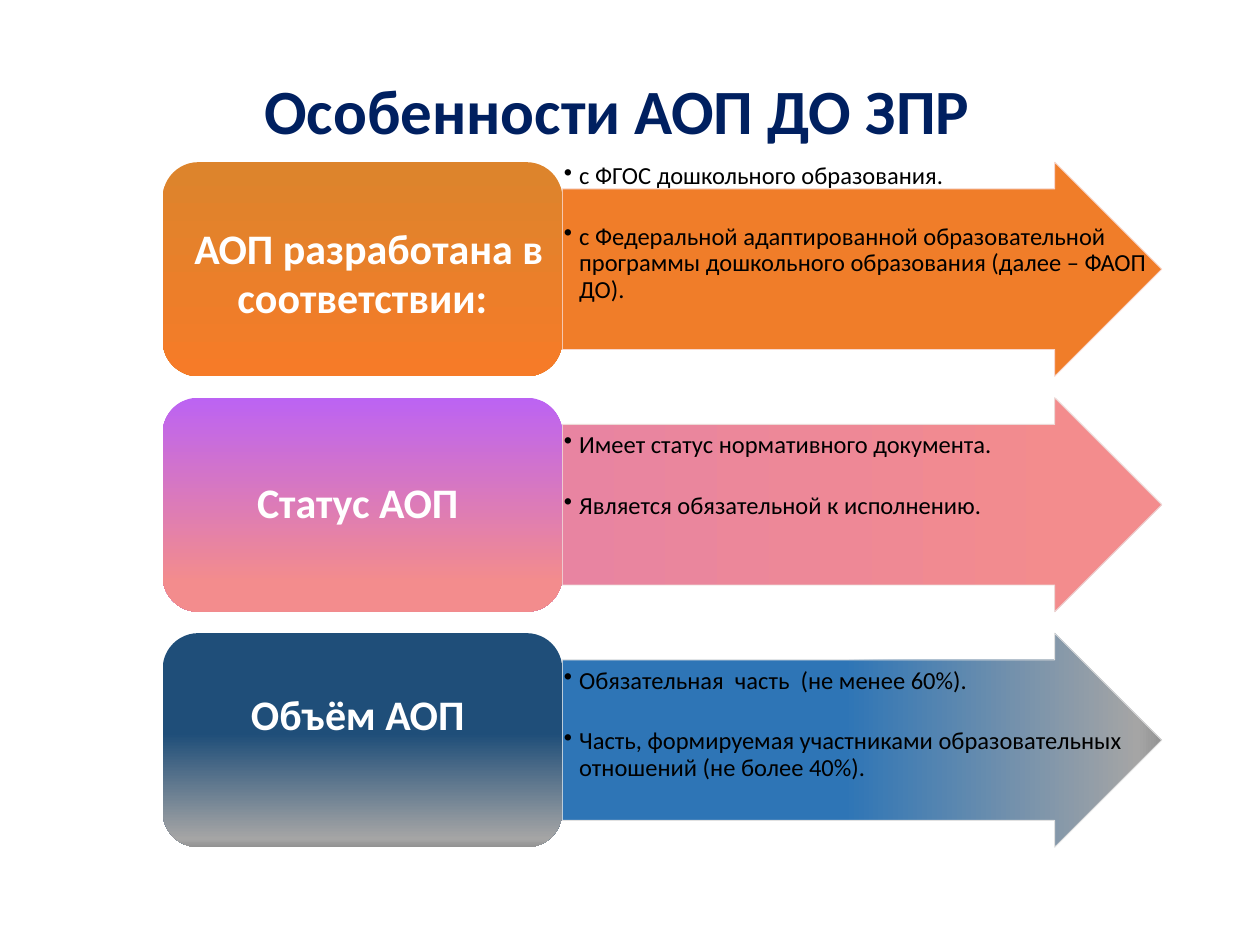
from copy import deepcopy

from pptx import Presentation
from pptx.dml.color import RGBColor
from pptx.enum.shapes import MSO_SHAPE as Kind
from pptx.enum.text import MSO_ANCHOR as Anchor, PP_ALIGN as Align
from pptx.oxml.ns import qn
from pptx.util import Cm, Pt

NAVY = RGBColor(0x00, 0x20, 0x60)
BLACK = RGBColor(0x00, 0x00, 0x00)
WHITE = RGBColor(0xFF, 0xFF, 0xFF)
AMBER = RGBColor(0xDD, 0x84, 0x2C)
ORANGE = RGBColor(0xF0, 0x7D, 0x29)
BRIGHT = RGBColor(0xF6, 0x7B, 0x28)
PEACH = RGBColor(0xF8, 0xD7, 0xCE)
VIOLET = RGBColor(0xBC, 0x63, 0xF3)
ROSE = RGBColor(0xE8, 0x84, 0xA1)
CORAL = RGBColor(0xF3, 0x8C, 0x8D)
BLUSH = RGBColor(0xED, 0xD9, 0xD7)
DEEP = RGBColor(0x1F, 0x4E, 0x79)
BLUE = RGBColor(0x2E, 0x75, 0xB6)
GREY = RGBColor(0xA5, 0xA5, 0xA5)
SLATE = RGBColor(0x93, 0x93, 0x93)
PALE = RGBColor(0xE1, 0xE1, 0xE1)

ROWS = [
    dict(
        label=[(" ", 32), ("АОП разработана в соответствии:", 24)],
        items=["с ФГОС дошкольного образования.",
               "с Федеральной адаптированной образовательной программы "
               "дошкольного образования (далее – ФАОП ДО)."],
        tile=[(3, AMBER), (100, BRIGHT)],
        arrow=[(0, ORANGE)],
        edge=PEACH, top=0.03, foot=0),
    dict(
        label=[("Статус АОП ", 24)],
        items=["Имеет статус нормативного документа.",
               "Является обязательной к исполнению."],
        tile=[(0, VIOLET), (86, CORAL)],
        arrow=[(0, ROSE), (86, CORAL)],
        edge=BLUSH, top=0.7, foot=0),
    dict(
        label=[("Объём АОП ", 24)],
        items=["Обязательная  часть  (не менее 60%).",
               "Часть, формируемая участниками образовательных "
               "отношений (не более 40%)."],
        tile=[(47, DEEP), (96, GREY), (100, SLATE)],
        arrow=[(47, BLUE), (96, GREY), (100, SLATE)],
        edge=PALE, top=0.7, foot=0.95),
]


def add_run(para, text, size, color, bold=False):
    """Add one styled run to a paragraph."""
    run = para.add_run()
    run.text = text
    font = run.font
    font.name, font.size, font.bold = "Calibri", Pt(size), bold
    font.color.rgb = color


def set_frame(frame, left, top, right, foot):
    """Turn on wrapping and set the insets in centimetres."""
    frame.word_wrap = True
    frame.margin_left, frame.margin_top = Cm(left), Cm(top)
    frame.margin_right, frame.margin_bottom = Cm(right), Cm(foot)


def paint(shape, stops, angle):
    """Fill a shape with one colour or with a linear gradient."""
    fill = shape.fill
    if len(stops) == 1:
        fill.solid()
        fill.fore_color.rgb = stops[0][1]
        return
    fill.gradient()
    fill.gradient_angle = angle
    chain = shape._element.spPr.find(".//" + qn("a:gsLst"))
    for _ in stops[2:]:
        chain.append(deepcopy(chain[-1]))
    for stop, (place, color) in zip(fill.gradient_stops, stops):
        stop.position = place / 100
        stop.color.rgb = color


def add_bullet(para):
    """Give a paragraph a hanging bullet."""
    props = para._p.get_or_add_pPr()
    props.set("marL", str(Cm(0.31)))
    props.set("indent", str(-Cm(0.31)))
    mark = props.makeelement(qn("a:buChar"), {"char": "•"})
    props.append(mark)


def add_title(slide, left, top, width, height):
    """Place the slide title in its box."""
    frame = slide.shapes.add_textbox(
        Cm(left), Cm(top), Cm(width), Cm(height)).text_frame
    set_frame(frame, 0.25, 0.13, 0.25, 0.13)
    add_run(frame.paragraphs[0], "Особенности АОП ДО ЗПР", 36, NAVY, True)


def add_arrow(slide, row, left, top, width, height):
    """Place the arrow of a row and the bullets over it."""
    box = Cm(left), Cm(top), Cm(width), Cm(height)
    arrow = slide.shapes.add_shape(Kind.RIGHT_ARROW, *box)
    arrow.shadow.inherit = False
    arrow.adjustments[0] = 0.75
    arrow.adjustments[1] = 0.5
    paint(arrow, row["arrow"], 0)
    arrow.line.color.rgb = row["edge"]
    arrow.line.width = Pt(0.5)
    frame = slide.shapes.add_textbox(*box).text_frame
    set_frame(frame, 0.03, row["top"], 0.03, 0.03)
    for i, text in enumerate(row["items"]):
        para = frame.add_paragraph() if i else frame.paragraphs[0]
        add_bullet(para)
        para.line_spacing = 0.9
        para.space_before = Pt(19.5 if i else 0)
        add_run(para, text, 14, BLACK)


def add_tile(slide, row, left, top, width, height):
    """Place the rounded label of a row."""
    tile = slide.shapes.add_shape(
        Kind.ROUNDED_RECTANGLE, Cm(left), Cm(top), Cm(width), Cm(height))
    tile.shadow.inherit = False
    paint(tile, row["tile"], 270)
    tile.line.fill.background()
    frame = tile.text_frame
    set_frame(frame, 0, 0, 0, row["foot"])
    frame.vertical_anchor = Anchor.MIDDLE
    para = frame.paragraphs[0]
    para.alignment = Align.CENTER
    para.line_spacing = 0.9
    for text, size in row["label"]:
        add_run(para, text, size, WHITE, True)


def add_rows(slide, left, top, width, height):
    """Stack the rows in a box with gaps of a tenth of a row."""
    tall = height / (len(ROWS) + 0.1 * (len(ROWS) - 1))
    split = width * 0.4
    for i, row in enumerate(ROWS):
        y = top + i * tall * 1.1
        add_arrow(slide, row, left + split, y, width - split, tall)
        add_tile(slide, row, left, y, split, tall)


def main():
    """Build and save the slide."""
    deck = Presentation()
    deck.slide_width, deck.slide_height = Cm(25.4), Cm(19.05)
    slide = deck.slides.add_slide(deck.slide_layouts[6])
    add_rows(slide, 3.28, 3.27, 20.14, 13.81)
    add_title(slide, 5.08, 1.32, 15.82, 1.8)
    deck.save("out.pptx")


if __name__ == "__main__":
    main()
